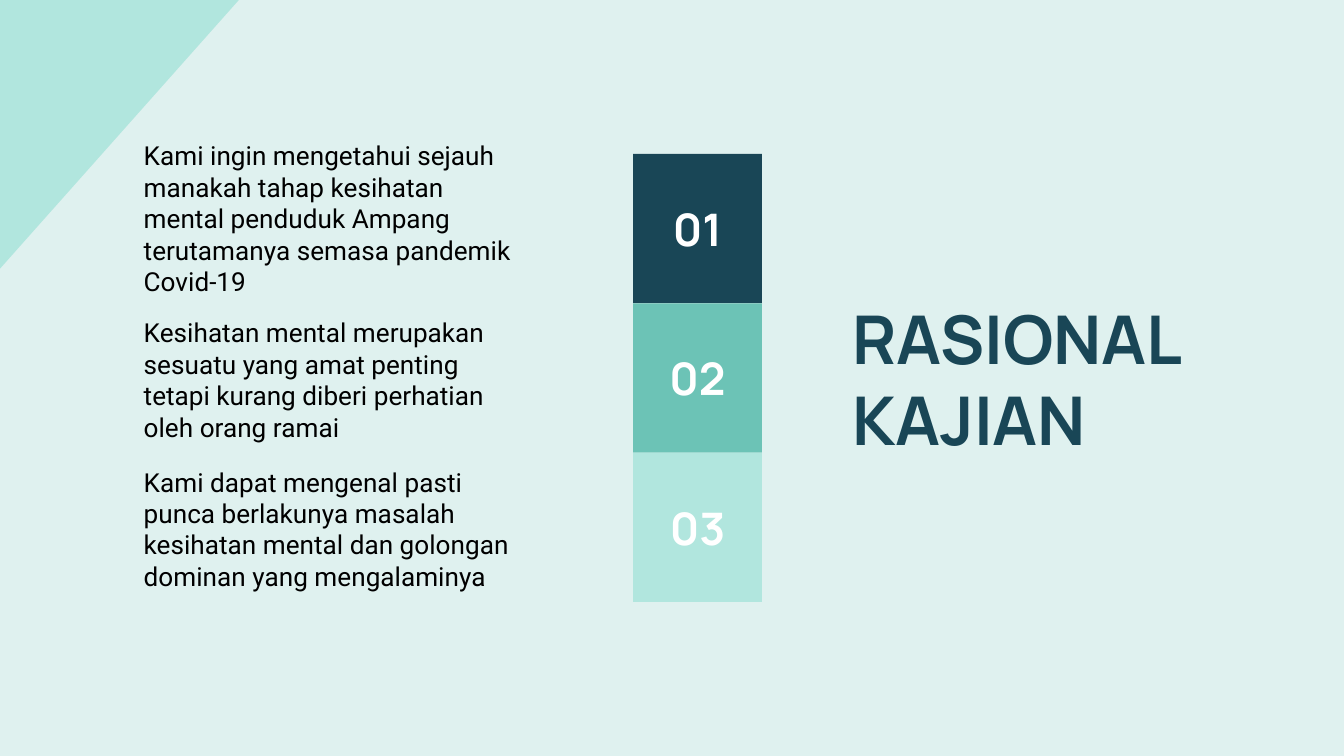
from lxml.etree import SubElement
from pptx import Presentation
from pptx.dml.color import RGBColor
from pptx.enum.shapes import MSO_SHAPE
from pptx.enum.text import MSO_ANCHOR as Anchor, MSO_AUTO_SIZE as AutoSize, PP_ALIGN as Align
from pptx.oxml.ns import qn
from pptx.util import Pt

NAVY = RGBColor(0x19, 0x46, 0x56)
TEAL = RGBColor(0x6C, 0xC3, 0xB6)
MINT = RGBColor(0xB1, 0xE6, 0xDE)
PALE = RGBColor(0xDF, 0xF1, 0xEF)
WHITE = RGBColor(0xFF, 0xFF, 0xFF)
BLACK = RGBColor(0, 0, 0)

# Content
TITLE = "RASIONAL KAJIAN"
# number, block colour, reason, top and height of the reason's box
REASONS = [
    ("01", NAVY, "Kami ingin mengetahui sejauh manakah tahap kesihatan mental "
     "penduduk Ampang terutamanya semasa pandemik Covid-19", 67.7, 94.3),
    ("02", TEAL, "Kesihatan mental merupakan sesuatu yang amat penting tetapi "
     "kurang diberi perhatian oleh orang ramai", 162.5, 80),
    ("03", MINT, "Kami dapat mengenal pasti punca berlakunya masalah kesihatan "
     "mental dan golongan dominan yang mengalaminya", 242.5, 80),
]

# Layout
BLOCK_LEFT, BLOCK_TOP, BLOCK_W, BLOCK_H = 339.2, 82.5, 69, 80
NUMBER_H = 50.4
REASON_LEFT, REASON_W = 69.8, 219.6
INSET = 7.2


def place(shape, left, top, width, height):
    shape.left, shape.top, shape.width, shape.height = map(Pt, (left, top, width, height))


def paint(shape, color):
    shape.fill.solid()
    shape.fill.fore_color.rgb = color
    shape.line.fill.background()
    shape.shadow.inherit = False


def write(shape, text, font, size, color, bold, anchor, align=Align.LEFT, side=INSET):
    frame = shape.text_frame
    frame.text = text
    frame.word_wrap = True
    frame.auto_size = AutoSize.NONE
    frame.vertical_anchor = anchor
    frame.margin_left = frame.margin_right = Pt(side)
    frame.margin_top = frame.margin_bottom = Pt(INSET)
    paragraph = frame.paragraphs[0]
    paragraph.alignment = align
    paragraph.font.name, paragraph.font.size = font, Pt(size)
    paragraph.font.bold, paragraph.font.color.rgb = bold, color
    return paragraph


def remove_bullet(paragraph):
    props = paragraph._p.get_or_add_pPr()
    props.set("marL", "0")
    props.set("indent", "0")
    SubElement(props, qn("a:buNone"))


prs = Presentation()
prs.slide_width, prs.slide_height = Pt(720), Pt(405)
slide = prs.slides.add_slide(prs.slide_layouts.get_by_name("Comparison"))
slide.background.fill.solid()
slide.background.fill.fore_color.rgb = PALE

# Corner triangle, behind everything else
builder = slide.shapes.build_freeform(0, 0, scale=Pt(1))
builder.add_line_segments([(0, 144.5), (128.2, 0)], close=True)
corner = builder.convert_to_shape()
paint(corner, MINT)
corner.element.getparent().insert(2, corner.element)

# Title
title, *reason_bodies = [p for p in slide.placeholders if p.placeholder_format.idx < 10]
place(title, 449.3, 130.3, 247.7, 144.7)
write(title, TITLE, "Manrope", 36, NAVY, True, Anchor.MIDDLE)

# Numbered blocks with their reasons
for row, (number, color, reason, top, height) in enumerate(REASONS):
    block_top = BLOCK_TOP + row * BLOCK_H
    block = slide.shapes.add_shape(MSO_SHAPE.RECTANGLE, 0, 0, 0, 0)
    place(block, BLOCK_LEFT, block_top, BLOCK_W, BLOCK_H)
    paint(block, color)

    label = slide.shapes.add_textbox(0, 0, 0, 0)
    place(label, BLOCK_LEFT, block_top + (BLOCK_H - NUMBER_H) / 2, BLOCK_W, NUMBER_H)
    write(label, number, "Manrope", 24, WHITE, True, Anchor.MIDDLE, Align.CENTER, 0)

    body = reason_bodies[row]
    place(body, REASON_LEFT, top, REASON_W, height)
    paragraph = write(body, reason, "Roboto", 14, BLACK, False, Anchor.TOP)
    paragraph.space_before, paragraph.space_after = Pt(0), Pt(8)
    remove_bullet(paragraph)

# Unused placeholder
for spare in reason_bodies[len(REASONS):]:
    spare.element.getparent().remove(spare.element)

prs.save("out.pptx")
